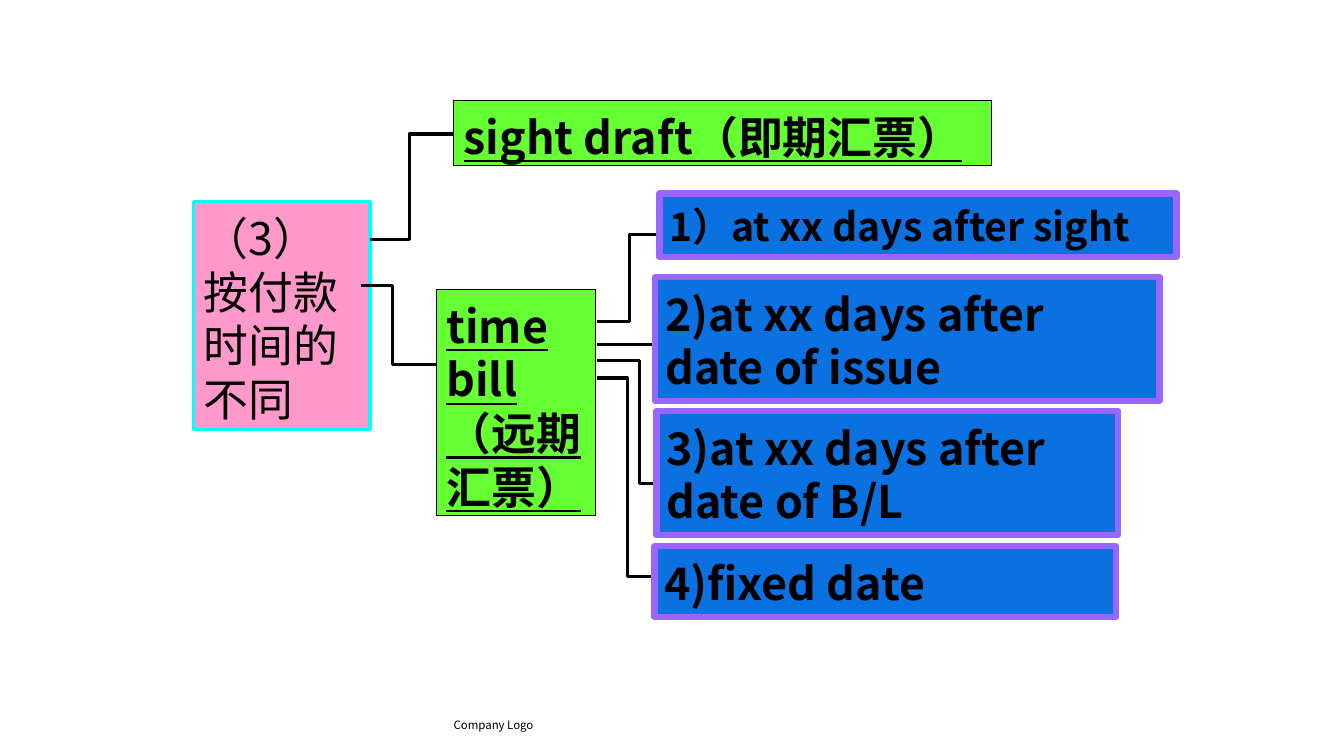
from lxml import etree
from pptx import Presentation, util as u
from pptx.dml.color import RGBColor
from pptx.enum import shapes, text
from pptx.oxml.ns import qn

FONT = "Noto Sans CJK SC"
COLORS = {
    "black": "000000",
    "pink": "FF99CC",
    "cyan": "00FFFF",
    "green": "66FF33",
    "blue": "0C71E0",
    "violet": "9966FF",
}
LINE_HEIGHT = 1.2
STYLES = {
    "root": {"fill": "pink", "line": "cyan", "width": 2.25, "font": {}},
    "draft": {"fill": "green", "line": "black", "width": 0.75,
              "font": {"bold": True, "underline": True}},
    "term": {"fill": "blue", "line": "violet", "width": 4.5,
             "font": {"bold": True}},
}
ROOT = ((1.92, 2, 1.75, 2.26), ["（3）按付款时间的不同"])
DRAFTS = [
    ((4.5, 1, 5.33, 0.64), ["sight draft（即期汇票）"]),
    ((4.33, 2.87, 1.58, 2.24), ["time bill", "（远期汇票）"]),
]
TERMS = [
    ((6.54, 1.92, 5.13, 0.63), ["1）at xx days after sight"], 28),
    ((6.5, 2.75, 5, 1.23), ["2)at xx days after date of issue"], 32),
    ((6.51, 4.08, 4.58, 1.23), ["3)at xx days after date of B/L"], 32),
    ((6.49, 5.42, 4.58, 0.7), ["4)fixed date"], 32),
]
BRANCHES = [
    ((3.67, 2.38), (4.5, 1.33), 4.06),
    ((3.58, 2.83), (4.33, 3.62), 3.89),
    ((5.92, 3.19), (6.55, 2.33), 6.24),
    ((5.92, 3.42), (6.58, 3.42), None),
    ((5.92, 3.58), (6.83, 4.8), 6.34),
    ((5.92, 3.75), (6.47, 5.72), 6.22),
]


def color(name):
    return RGBColor.from_string(COLORS[name])


def set_values(target, values):
    for name, value in values.items():
        setattr(target, name, value)


def write(frame, lines, size, font_values, frame_values):
    set_values(frame, {"word_wrap": True, **frame_values})
    for index, line in enumerate(lines):
        para = frame.paragraphs[0] if index == 0 else frame.add_paragraph()
        set_values(para, {"alignment": text.PP_ALIGN.LEFT,
                          "line_spacing": u.Pt(size * LINE_HEIGHT)})
        span = para.add_run()
        span.text = line
        set_values(span.font, {"name": FONT, "size": u.Pt(size), **font_values})
        span.font.color.rgb = color("black")
        east_asian = etree.SubElement(span.font._element, qn("a:ea"))
        east_asian.set("typeface", FONT)


def add_box(page, place, lines, style, size=32):
    box = page.shapes.add_shape(shapes.MSO_SHAPE.RECTANGLE, *map(u.Inches, place))
    box.shadow.inherit = False
    box.fill.solid()
    box.fill.fore_color.rgb = color(style["fill"])
    box.line.color.rgb = color(style["line"])
    box.line.width = u.Pt(style["width"])
    write(box.text_frame, lines, size, style["font"],
          {"vertical_anchor": text.MSO_ANCHOR.TOP, "margin_top": u.Inches(0.09)})


def add_branch(page, start, end, bend):
    kind = shapes.MSO_CONNECTOR.ELBOW if bend else shapes.MSO_CONNECTOR.STRAIGHT
    branch = page.shapes.add_connector(kind, *map(u.Inches, start + end))
    branch.line.color.rgb = color("black")
    branch.line.width = u.Pt(2.25)
    properties = branch._element.spPr
    etree.SubElement(properties, qn("a:effectLst"))
    if bend:
        share = (bend - start[0]) / (end[0] - start[0])
        guides = properties.find(qn("a:prstGeom")).find(qn("a:avLst"))
        etree.SubElement(guides, qn("a:gd"), name="adj1",
                         fmla=f"val {round(share * 100000)}")


def add_footer(page):
    box = page.shapes.add_textbox(*map(u.Inches, (4.5, 6.91, 4.33, 0.35)))
    margins = {f"margin_{side}": 0 for side in ("left", "top", "right", "bottom")}
    write(box.text_frame, ["Company Logo"], 8.2, {},
          {"vertical_anchor": text.MSO_ANCHOR.BOTTOM, **margins})


def main():
    deck = Presentation()
    set_values(deck, {"slide_width": u.Inches(13.33), "slide_height": u.Inches(7.5)})
    page = deck.slides.add_slide(deck.slide_layouts[6])
    add_footer(page)
    add_box(page, *ROOT, STYLES["root"])
    for branch in BRANCHES:
        add_branch(page, *branch)
    for place, lines in DRAFTS:
        add_box(page, place, lines, STYLES["draft"])
    for place, lines, size in TERMS:
        add_box(page, place, lines, STYLES["term"], size)
    deck.save("out.pptx")


if __name__ == "__main__":
    main()
